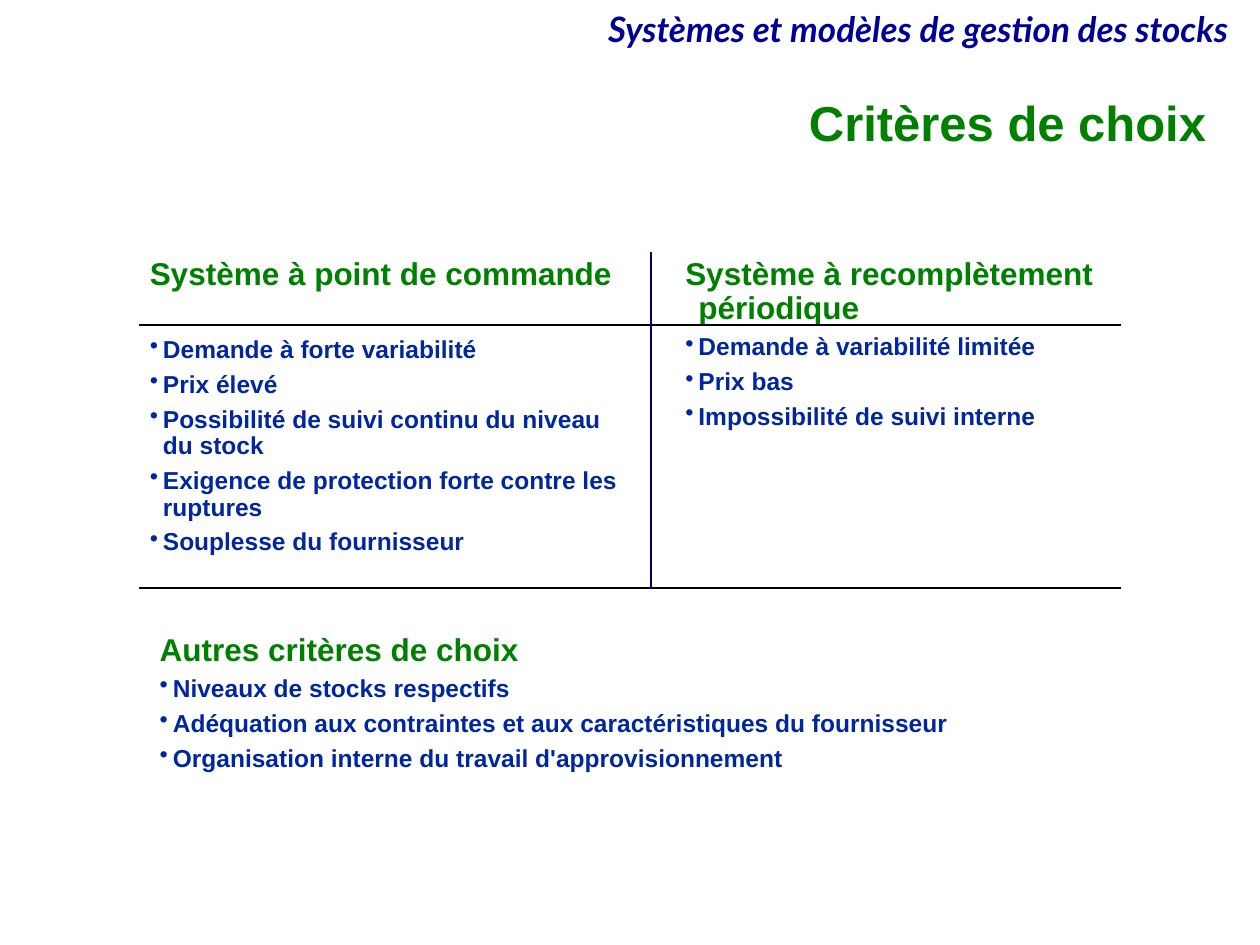
from lxml import etree
from pptx import Presentation
from pptx import util as u
from pptx.dml.color import RGBColor
from pptx.enum import shapes, text
from pptx.oxml import ns

GREEN = "008000"
BLUE = "00279F"


def color(value):
    """Turn a hex string into a colour."""
    return RGBColor.from_string(value)


def add_text_box(slide, left, top, width, height):
    """Add a wrapping text box and return its text frame."""
    shape = slide.shapes.add_textbox(u.Pt(left), u.Pt(top), u.Pt(width), u.Pt(height))
    shape.text_frame.word_wrap = True
    return shape.text_frame


def style_paragraph(paragraph, content, size, fill, name="Arial", italic=False):
    """Write a bold paragraph with tight line spacing."""
    paragraph.text = content
    paragraph.line_spacing = 0.9
    paragraph.font.name = name
    paragraph.font.size = u.Pt(size)
    paragraph.font.bold = True
    paragraph.font.italic = italic
    paragraph.font.color.rgb = color(fill)


def indent_paragraph(paragraph, bullet=False):
    """Give a paragraph a hanging indent and an optional bullet."""
    properties = paragraph._p.get_or_add_pPr()
    properties.set("marL", str(u.Pt(7.5)))
    properties.set("indent", str(-u.Pt(7.5)))
    if bullet:
        mark = etree.Element(ns.qn("a:buChar"), char="•")
        properties.find(ns.qn("a:defRPr")).addprevious(mark)


def add_heading(slide, box, content, size, fill, **style):
    """Add a right-aligned heading."""
    frame = add_text_box(slide, *box)
    frame.vertical_anchor = text.MSO_ANCHOR.MIDDLE
    style_paragraph(frame.paragraphs[0], content, size, fill, **style)
    frame.paragraphs[0].alignment = text.PP_ALIGN.RIGHT


def add_criteria(slide, box, heading, criteria, gap=0):
    """Add a green heading followed by a bulleted list."""
    frame = add_text_box(slide, *box)
    title = frame.paragraphs[0]
    style_paragraph(title, heading, 18, GREEN)
    title.space_after = u.Pt(gap)
    indent_paragraph(title)
    for criterion in criteria:
        paragraph = frame.add_paragraph()
        style_paragraph(paragraph, criterion, 14, BLUE)
        paragraph.space_before = u.Pt(4.8)
        indent_paragraph(paragraph, bullet=True)


def add_rule(slide, start, end, fill):
    """Draw a thin straight line."""
    line = slide.shapes.add_connector(
        shapes.MSO_CONNECTOR.STRAIGHT, *(u.Pt(value) for value in start + end))
    line.line.color.rgb = color(fill)
    line.line.width = u.Pt(1)
    etree.SubElement(line._element.spPr, ns.qn("a:effectLst"))


def main():
    """Build the slide and save it."""
    presentation = Presentation()
    presentation.slide_width, presentation.slide_height = u.Pt(720), u.Pt(540)
    slide = presentation.slides.add_slide(presentation.slide_layouts[6])

    add_heading(slide, (257.8, 3.6, 451.4, 28.8),
                "Systèmes et modèles de gestion des stocks", 20, "000099",
                name="Lato", italic=True)
    add_heading(slide, (126, 54, 570.2, 36), "Critères de choix", 28, GREEN)

    add_criteria(slide, (84.2, 358.6, 563.8, 97.2), "Autres critères de choix", [
        "Niveaux de stocks respectifs",
        "Adéquation aux contraintes et aux caractéristiques du fournisseur",
        "Organisation interne du travail d'approvisionnement",
    ])
    add_criteria(slide, (78.5, 144, 281.5, 197.3), "Système à point de commande", [
        "Demande à forte variabilité",
        "Prix élevé",
        "Possibilité de suivi continu du niveau du stock",
        "Exigence de protection forte contre les ruptures",
        "Souplesse du fournisseur",
    ], gap=21)
    add_criteria(slide, (384.5, 144, 257.8, 126.7), "Système à recomplètement périodique", [
        "Demande à variabilité limitée",
        "Prix bas",
        "Impossibilité de suivi interne",
    ])

    for y in (185.8, 336.2):
        add_rule(slide, (79.2, y), (640.8, y), "000000")
    add_rule(slide, (372.2, 144), (372.2, 336.2), "000066")
    presentation.save("out.pptx")


if __name__ == "__main__":
    main()
